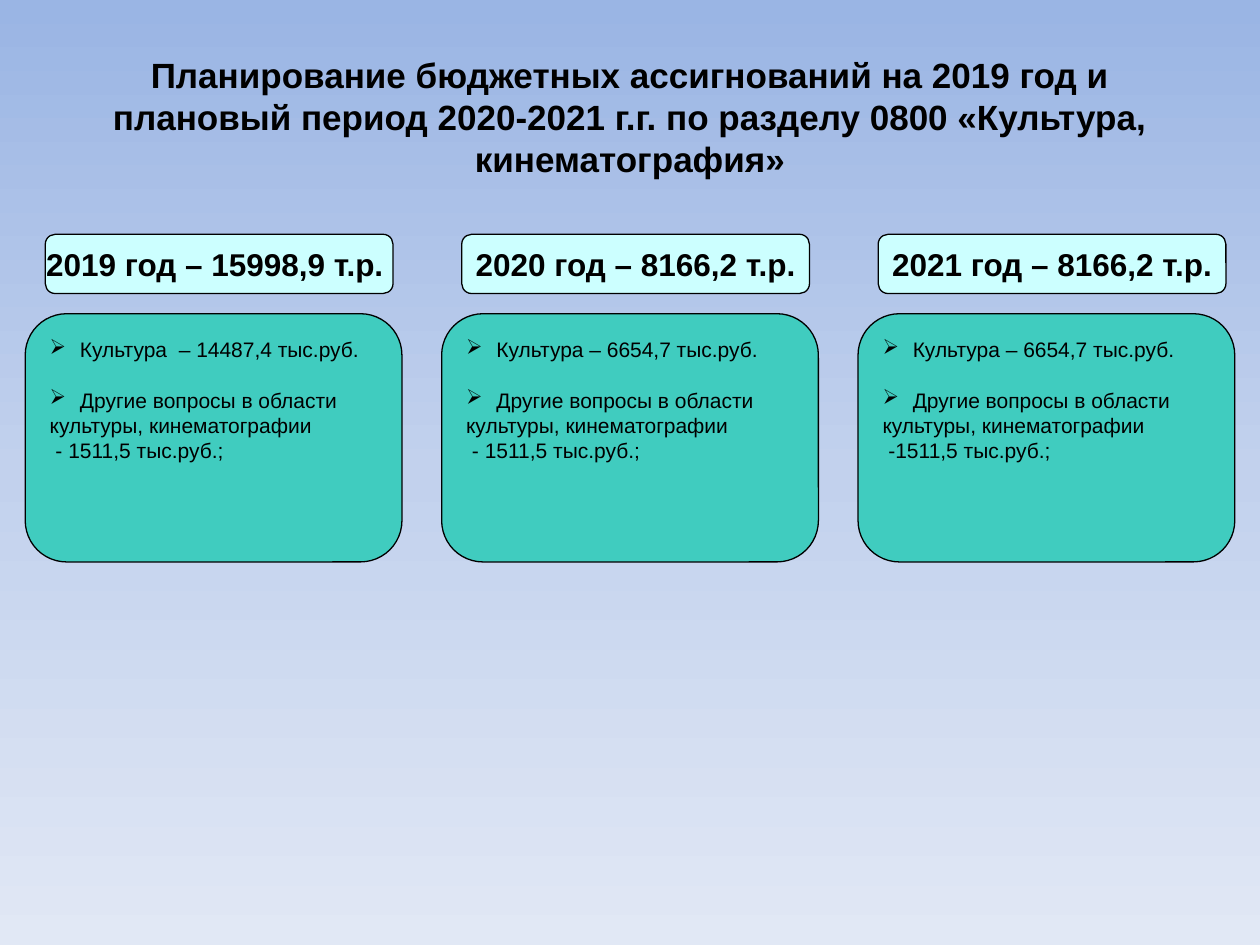
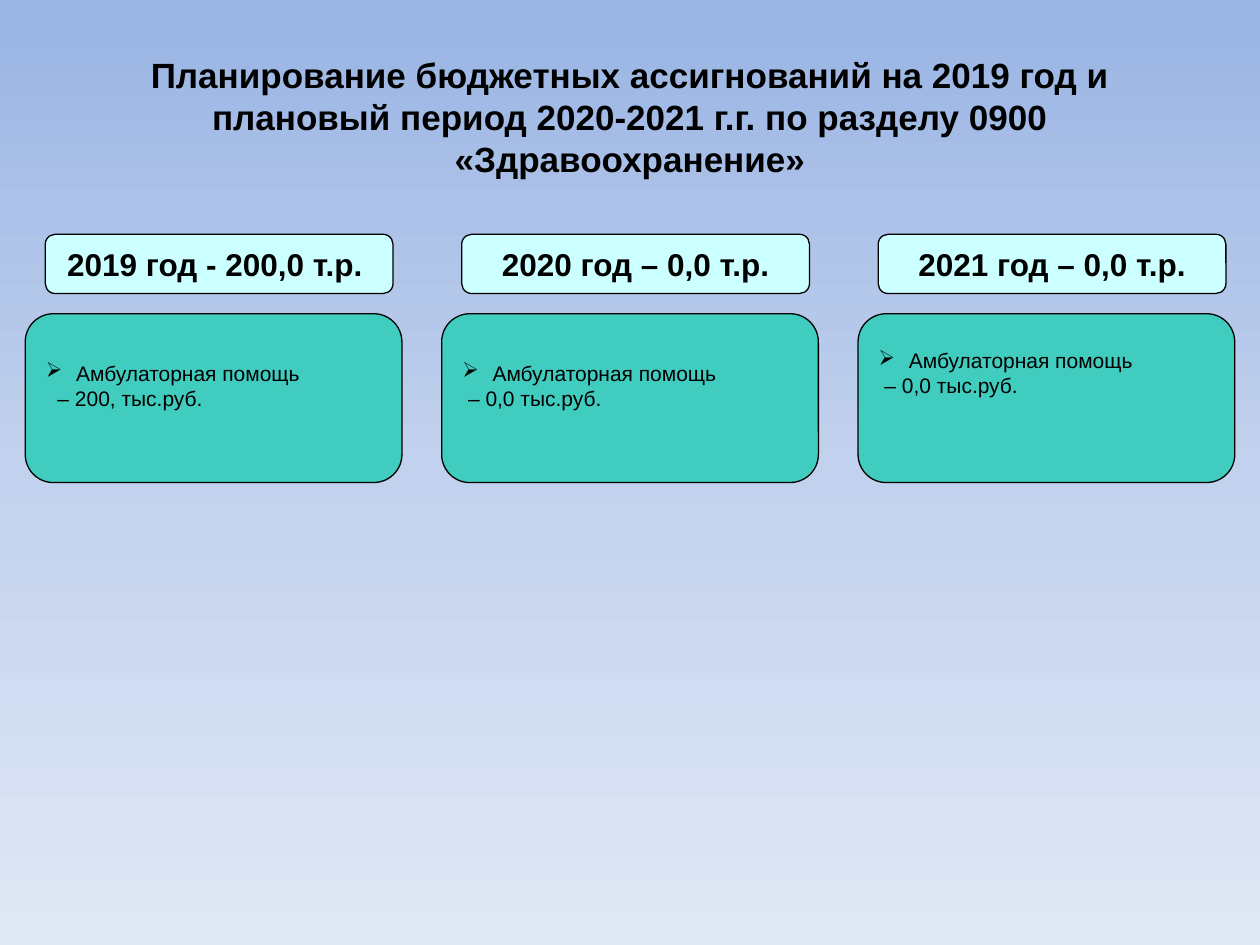
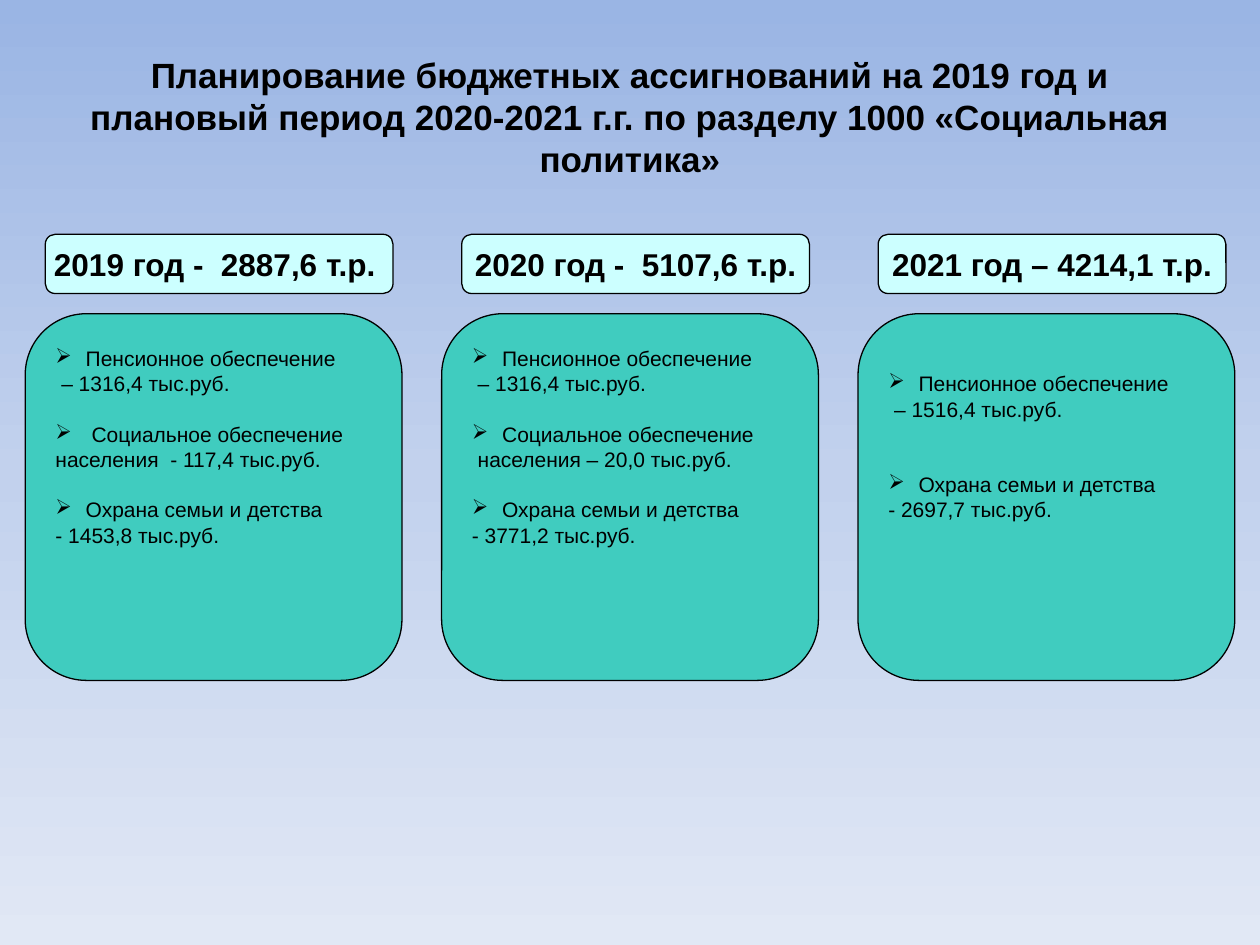
"""Build three slides on planned budget allocations by section for 2019-2021."""
from dataclasses import dataclass

from lxml import etree
from copy import deepcopy
from pptx import Presentation
from pptx.dml.color import RGBColor
from pptx.enum.shapes import MSO_SHAPE
from pptx.enum.text import MSO_ANCHOR, PP_ALIGN
from pptx.oxml.ns import qn
from pptx.util import Inches, Pt

ROUNDED = MSO_SHAPE.ROUNDED_RECTANGLE
MIDDLE = MSO_ANCHOR.MIDDLE
CENTER, LEFT = PP_ALIGN.CENTER, PP_ALIGN.LEFT

SLIDE_W, SLIDE_H = 10, 7.5
MARGIN = 0.2
YEAR_COLUMNS = 3
CARD_W, CARD_TOP = 2.99, 2.49
HEADING_W, HEADING_H, HEADING_TOP = 2.76, 0.47, 1.86
HEADING_INDENT = 0.16
COLUMN_STEP = (SLIDE_W - 2 * MARGIN - CARD_W) / (YEAR_COLUMNS - 1)
INSET = 0.05
BULLET_INDENT = 0.24
LINE_PT = 14.4

FONT = "Arial"
INK = "000000"
HEADING_FILL = "CCFFFF"
CARD_FILL = "40CCBF"
BACKDROP = ("9AB5E4", "C2D1ED", "E1E8F5")
TITLE_START = "Планирование бюджетных ассигнований на 2019 год и плановый период 2020-2021 г.г. по разделу "


@dataclass(frozen=True)
class Expense:
    lines: tuple[str, ...]
    lines_before: int = 1


@dataclass(frozen=True)
class YearPlan:
    heading: str
    expenses: tuple[Expense, ...]
    lines_below: int


@dataclass(frozen=True)
class Section:
    name: str
    card_height: float
    years: tuple[YearPlan, ...]


def culture(heading: str, amount: str, other: str) -> YearPlan:
    """Return a year of the culture section."""
    other_lines = ("Другие вопросы в области", "культуры, кинематографии", other)
    return YearPlan(heading, (Expense((amount,)), Expense(other_lines)), 3)


def health(heading: str, amount: str, lines_below: int = 1) -> YearPlan:
    """Return a year of the health section."""
    return YearPlan(heading, (Expense(("Амбулаторная помощь", amount)),), lines_below)


def social(heading: str, pension: str, family: str, support: tuple[str, ...] = ()) -> YearPlan:
    """Return a year of the social section, with population support if planned."""
    support_items = (Expense(support),) if support else ()
    family_item = Expense(("Охрана семьи и детства", family), 1 if support else 2)
    return YearPlan(heading, (Expense(("Пенсионное обеспечение", pension)), *support_items, family_item), 4)


SECTIONS = (
    Section("0800 «Культура, кинематография»", 1.97, (
        culture("2019 год – 15998,9 т.р. ", "Культура  – 14487,4 тыс.руб.", " - 1511,5 тыс.руб.;"),
        culture("2020 год – 8166,2 т.р.", "Культура – 6654,7 тыс.руб.", " - 1511,5 тыс.руб.;"),
        culture("2021 год – 8166,2 т.р.", "Культура – 6654,7 тыс.руб.", " -1511,5 тыс.руб.;"),
    )),
    Section("0900 «Здравоохранение»", 1.34, (
        health("2019 год - 200,0 т.р. ", "  – 200, тыс.руб."),
        health("2020 год – 0,0 т.р.", " – 0,0 тыс.руб."),
        health("2021 год – 0,0 т.р.", " – 0,0 тыс.руб.", 2),
    )),
    Section("1000 «Социальная политика»", 2.91, (
        social("2019 год -  2887,6 т.р. ", " – 1316,4 тыс.руб.", "- 1453,8 тыс.руб.",
               (" Социальное обеспечение", "населения  - 117,4 тыс.руб.")),
        social("2020 год -  5107,6 т.р.", " – 1316,4 тыс.руб.", "- 3771,2 тыс.руб.",
               ("Социальное обеспечение", " населения – 20,0 тыс.руб.")),
        social("2021 год – 4214,1 т.р.", " – 1516,4 тыс.руб.", "- 2697,7 тыс.руб."),
    )),
)


def rgb(value: str) -> RGBColor:
    """Turn a hex string into a colour."""
    return RGBColor.from_string(value)


def write(paragraph, text: str, size: float, align, bold: bool = False) -> None:
    """Fill a paragraph with text in the common font."""
    paragraph.text = text
    paragraph.alignment = align
    for run in paragraph.runs:
        run.font.name, run.font.size, run.font.bold = FONT, Pt(size), bold
        run.font.color.rgb = rgb(INK)


def add_bullet(paragraph) -> None:
    """Give a paragraph an arrow bullet with a hanging indent."""
    properties = paragraph._p.get_or_add_pPr()
    properties.set("marL", str(Inches(BULLET_INDENT)))
    properties.set("indent", str(-Inches(BULLET_INDENT)))
    etree.SubElement(properties, qn("a:buChar")).set("char", "➢")


def add_box(slide, left: float, top: float, width: float, height: float, fill: str):
    """Draw an outlined rounded box and return its text frame."""
    box = slide.shapes.add_shape(ROUNDED, Inches(left), Inches(top), Inches(width), Inches(height))
    box.shadow.inherit = False
    box.fill.solid()
    box.fill.fore_color.rgb = rgb(fill)
    box.line.color.rgb = rgb(INK)
    box.line.width = Pt(0.75)
    box.text_frame.vertical_anchor = MIDDLE
    return box.text_frame


def add_title(slide, name: str) -> None:
    """Write the slide title for a budget section."""
    title = slide.shapes.add_textbox(Inches(0.5), Inches(0.3), Inches(9), Inches(1.25)).text_frame
    title.word_wrap = True
    title.vertical_anchor = MIDDLE
    write(title.paragraphs[0], TITLE_START + name, 20, CENTER, True)


def add_year(slide, column: int, plan: YearPlan, card_height: float) -> None:
    """Draw a year's total and the card with its expenses."""
    left = MARGIN + column * COLUMN_STEP
    heading = add_box(slide, left + HEADING_INDENT, HEADING_TOP, HEADING_W, HEADING_H, HEADING_FILL)
    heading.word_wrap = False
    write(heading.paragraphs[0], plan.heading, 18, CENTER, True)

    card = add_box(slide, left, CARD_TOP, CARD_W, card_height, CARD_FILL)
    card.word_wrap = True
    card.margin_bottom = Inches(INSET) + Pt(LINE_PT * plan.lines_below)
    for item, expense in enumerate(plan.expenses):
        for row, line in enumerate(expense.lines):
            first = item == row == 0
            paragraph = card.paragraphs[0] if first else card.add_paragraph()
            write(paragraph, line, 12, LEFT)
            if row == 0:
                if item > 0:
                    paragraph.space_before = Pt(LINE_PT * expense.lines_before)
                add_bullet(paragraph)


def paint_backdrop(master) -> None:
    """Give every slide the vertical three-colour gradient."""
    fill = master.background.fill
    fill.gradient()
    fill.gradient_angle = 270
    stop_list = master.element.find(".//" + qn("a:gsLst"))
    stop_list.insert(1, deepcopy(stop_list[0]))
    for index, (stop, colour) in enumerate(zip(fill.gradient_stops, BACKDROP)):
        stop.color.rgb = rgb(colour)
        stop.position = index / (len(BACKDROP) - 1)


def main() -> None:
    """Build and save the presentation."""
    deck = Presentation()
    deck.slide_width, deck.slide_height = Inches(SLIDE_W), Inches(SLIDE_H)
    paint_backdrop(deck.slide_master)
    for section in SECTIONS:
        slide = deck.slides.add_slide(deck.slide_layouts[6])
        add_title(slide, section.name)
        for column, plan in enumerate(section.years):
            add_year(slide, column, plan, section.card_height)
    deck.save("out.pptx")


if __name__ == "__main__":
    main()
